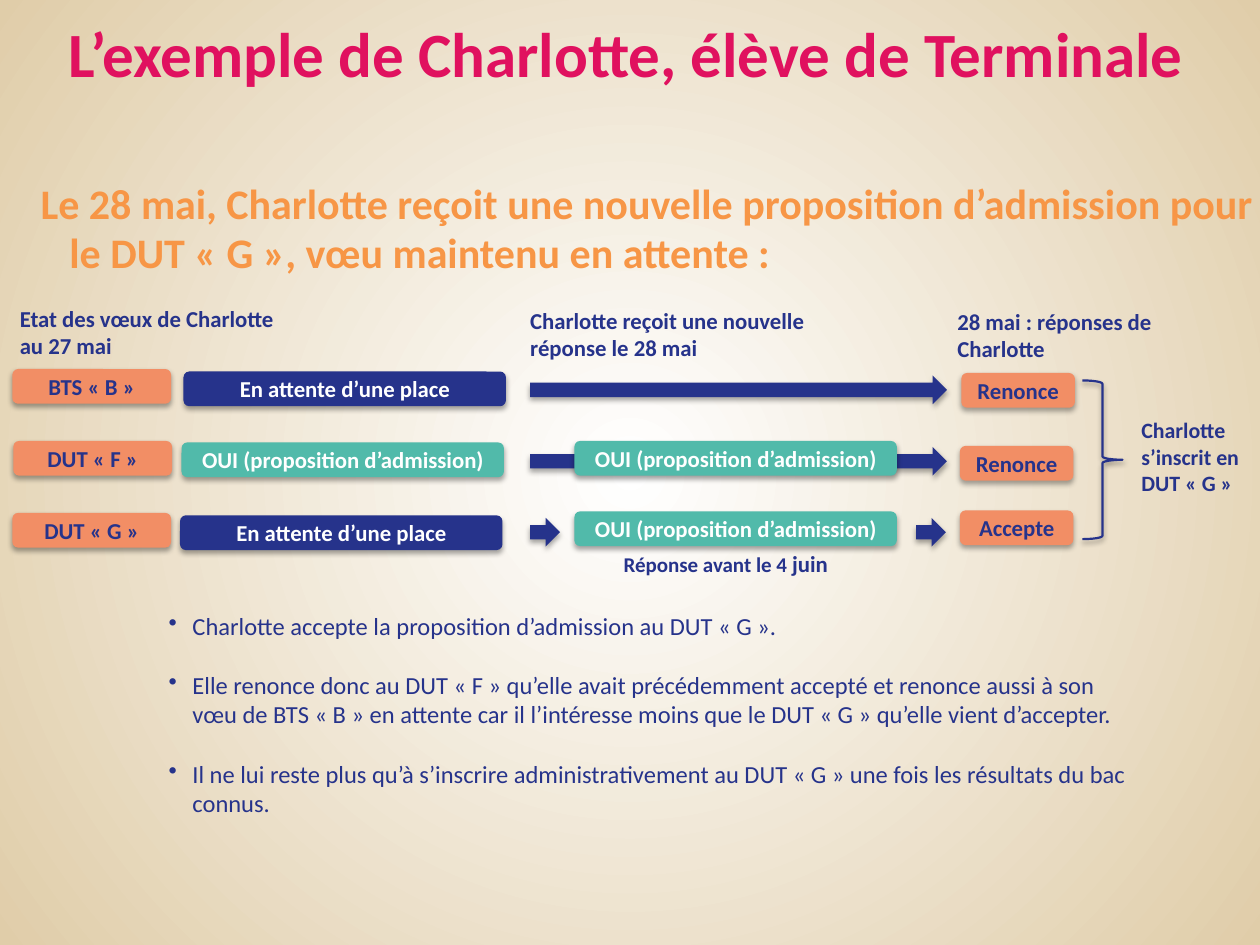
from dataclasses import dataclass

from lxml.etree import SubElement
from pptx import Presentation
from pptx.dml.color import RGBColor
from pptx.enum.shapes import MSO_SHAPE
from pptx.enum.text import MSO_ANCHOR, MSO_AUTO_SIZE, PP_ALIGN
from pptx.oxml import parse_xml
from pptx.oxml.ns import nsdecls, qn
from pptx.shapes.autoshape import Shape
from pptx.slide import Slide
from pptx.util import Cm, Pt

NAVY = RGBColor(0x26, 0x33, 0x8B)
CORAL = RGBColor(0xF2, 0x8E, 0x65)
TEAL = RGBColor(0x51, 0xBA, 0xAA)
WHITE = RGBColor(0xFF, 0xFF, 0xFF)
PINK = RGBColor(0xE0, 0x11, 0x5F)
ORANGE = RGBColor(0xF7, 0x96, 0x46)
SAND = RGBColor(0xE0, 0xCD, 0xA9)
FONT = "Calibri"
WISH, STATE, REPLY = 3.2, 6.5, 2.29
YES = "OUI (proposition d’admission)"
WAIT = "En attente d’une place"


@dataclass
class Pill:
    text: str
    left: float
    top: float
    width: float
    fill: RGBColor
    ink: RGBColor


@dataclass
class Arrow:
    left: float
    top: float
    width: float


@dataclass
class Label:
    text: str
    left: float
    top: float
    width: float
    height: float
    size: float = 13


PILLS = [
    Pill("BTS « B »", 0.25, 7.44, WISH, CORAL, NAVY),
    Pill("DUT « F »", 0.27, 8.89, WISH, CORAL, NAVY),
    Pill("DUT « G »", 0.25, 10.34, WISH, CORAL, NAVY),
    Pill(WAIT, 3.7, 7.49, STATE, NAVY, WHITE),
    Pill(YES, 3.66, 8.92, STATE, TEAL, WHITE),
    Pill(WAIT, 3.63, 10.39, STATE, NAVY, WHITE),
    Pill(YES, 11.58, 8.89, STATE, TEAL, WHITE),
    Pill(YES, 11.58, 10.31, STATE, TEAL, WHITE),
    Pill("Renonce", 19.38, 7.52, REPLY, CORAL, NAVY),
    Pill("Renonce", 19.35, 8.99, REPLY, CORAL, NAVY),
    Pill("Accepte", 19.35, 10.29, REPLY, CORAL, NAVY),
]
ARROWS = [
    Arrow(10.69, 7.57, 8.4),
    Arrow(10.69, 9.01, 8.4),
    Arrow(10.69, 10.44, 0.6),
    Arrow(18.47, 10.44, 0.6),
]
LABELS = [
    Label("Etat des vœux de Charlotte au 27 mai", 0.15, 6.02, 6.1, 1.37),
    Label("Charlotte reçoit une nouvelle réponse le 28 mai", 10.44, 6.05, 7.2, 1.37),
    Label("28 mai : réponses de Charlotte", 19.05, 6.07, 5.2, 1.37),
    Label("Charlotte s’inscrit en DUT « G »", 22.76, 8.28, 2.6, 1.85, 12.5),
]
NOTES = [
    "Charlotte accepte la proposition d’admission au DUT « G ».",
    "Elle renonce donc au DUT « F » qu’elle avait précédemment accepté et renonce aussi "
    "à son vœu de BTS « B » en attente car il l’intéresse moins que le DUT « G » "
    "qu’elle vient d’accepter.",
    "Il ne lui reste plus qu’à s’inscrire administrativement au DUT « G » une fois les "
    "résultats du bac connus.",
]
LEAD = [
    "Le 28 mai, Charlotte reçoit une nouvelle proposition d’admission pour",
    "le DUT « G », vœu maintenu en attente :",
]


def style(para, size: float, ink: RGBColor, bold: bool = True) -> None:
    font = para.font
    font.name, font.size, font.bold = FONT, Pt(size), bold
    font.color.rgb = ink


def shade(shape: Shape, alpha: int = 35) -> None:
    shape.shadow.inherit = False
    glow = shape._element.spPr.find(qn("a:effectLst"))
    drop = SubElement(glow, qn("a:outerShdw"), blurRad=str(Pt(3.1)),
                      dist=str(Pt(1.8)), dir="5400000", rotWithShape="0")
    tint = SubElement(drop, qn("a:srgbClr"), val="000000")
    SubElement(tint, qn("a:alpha"), val=str(alpha * 1000))


def add_form(slide: Slide, kind: MSO_SHAPE, left: float, top: float,
             width: float, height: float, fill: RGBColor) -> Shape:
    shape = slide.shapes.add_shape(kind, Cm(left), Cm(top), Cm(width), Cm(height))
    shape.fill.solid()
    shape.fill.fore_color.rgb = fill
    shape.line.fill.background()
    shade(shape)
    return shape


def add_pill(slide: Slide, pill: Pill) -> None:
    shape = add_form(slide, MSO_SHAPE.ROUNDED_RECTANGLE, pill.left, pill.top,
                     pill.width, 0.7, pill.fill)
    frame = shape.text_frame
    frame.vertical_anchor = MSO_ANCHOR.MIDDLE
    para = frame.paragraphs[0]
    para.text, para.alignment = pill.text, PP_ALIGN.CENTER
    style(para, 13, pill.ink)


def add_box(slide: Slide, left: float, top: float, width: float, height: float):
    box = slide.shapes.add_textbox(Cm(left), Cm(top), Cm(width), Cm(height))
    box.text_frame.word_wrap = True
    return box.text_frame


def add_label(slide: Slide, label: Label) -> None:
    frame = add_box(slide, label.left, label.top, label.width, label.height)
    para = frame.paragraphs[0]
    para.text = label.text
    style(para, label.size, NAVY)


def add_title(slide: Slide) -> None:
    title = slide.shapes.title
    title.left, title.top = Cm(0.1), Cm(0.23)
    title.width, title.height = Cm(25.04), Cm(1.63)
    frame = title.text_frame
    frame.auto_size = MSO_AUTO_SIZE.NONE
    frame.vertical_anchor = MSO_ANCHOR.MIDDLE
    para = frame.paragraphs[0]
    para.text, para.alignment = "L’exemple de Charlotte, élève de Terminale", PP_ALIGN.CENTER
    style(para, 36, PINK)


def add_lead(slide: Slide) -> None:
    frame = add_box(slide, 0.82, 3.78, 24.58, 2)
    frame.margin_left = frame.margin_right = frame.margin_top = 0
    frame.text = "\n".join(LEAD)
    for row, para in enumerate(frame.paragraphs):
        para.line_spacing = 0.8
        para.space_before = Pt(4.8 * row)
        para._p.get_or_add_pPr().set("marL", str(Cm(0.58 * row)))
        style(para, 24, ORANGE)


def add_notes(slide: Slide) -> None:
    frame = add_box(slide, 3.15, 12.19, 20.1, 4.4)
    frame.text = "\n".join(NOTES)
    for row, para in enumerate(frame.paragraphs):
        para.space_before = Pt(17 if row else 0)
        style(para, 14, NAVY, False)
        props = para._p.get_or_add_pPr()
        props.set("marL", str(Cm(0.48)))
        props.set("indent", str(-Cm(0.48)))
        mark = parse_xml(f'<a:buChar {nsdecls("a")} char="•"/>')
        props.find(qn("a:defRPr")).addprevious(mark)


def add_reply(slide: Slide) -> None:
    para = add_box(slide, 12.32, 10.95, 5.4, 0.8).paragraphs[0]
    style(para, 12, NAVY)
    para.add_run().text = "Réponse avant le 4 "
    month = para.add_run()
    month.text = "juin"
    month.font.size = Pt(13)


def add_brace(slide: Slide) -> None:
    brace = slide.shapes.add_shape(MSO_SHAPE.RIGHT_BRACE, Cm(21.82), Cm(7.67), Cm(0.81), Cm(3.2))
    brace.fill.background()
    brace.line.color.rgb = NAVY
    brace.line.width = Pt(1.25)
    shade(brace, 38)


def paint(slide: Slide) -> None:
    fill = slide.background.fill
    fill.gradient()
    for stop, tint, place in zip(fill.gradient_stops, (WHITE, SAND), (0, 1)):
        stop.color.rgb, stop.position = tint, place
    grad = slide._element.cSld.bg.bgPr.find(qn("a:gradFill"))
    line = grad.find(qn("a:lin"))
    grad.replace(line, parse_xml(
        f'<a:path {nsdecls("a")} path="circle">'
        '<a:fillToRect l="50000" t="50000" r="50000" b="50000"/></a:path>'))


def main() -> None:
    deck = Presentation()
    deck.slide_width, deck.slide_height = Cm(25.4), Cm(19.05)
    slide = deck.slides.add_slide(deck.slide_layouts[5])
    paint(slide)
    add_title(slide)
    add_lead(slide)
    for item in ARROWS:
        add_form(slide, MSO_SHAPE.RIGHT_ARROW, item.left, item.top, item.width, 0.58, NAVY)
    for pill in PILLS:
        add_pill(slide, pill)
    for label in LABELS:
        add_label(slide, label)
    add_reply(slide)
    add_brace(slide)
    add_notes(slide)
    deck.save("out.pptx")


if __name__ == "__main__":
    main()
